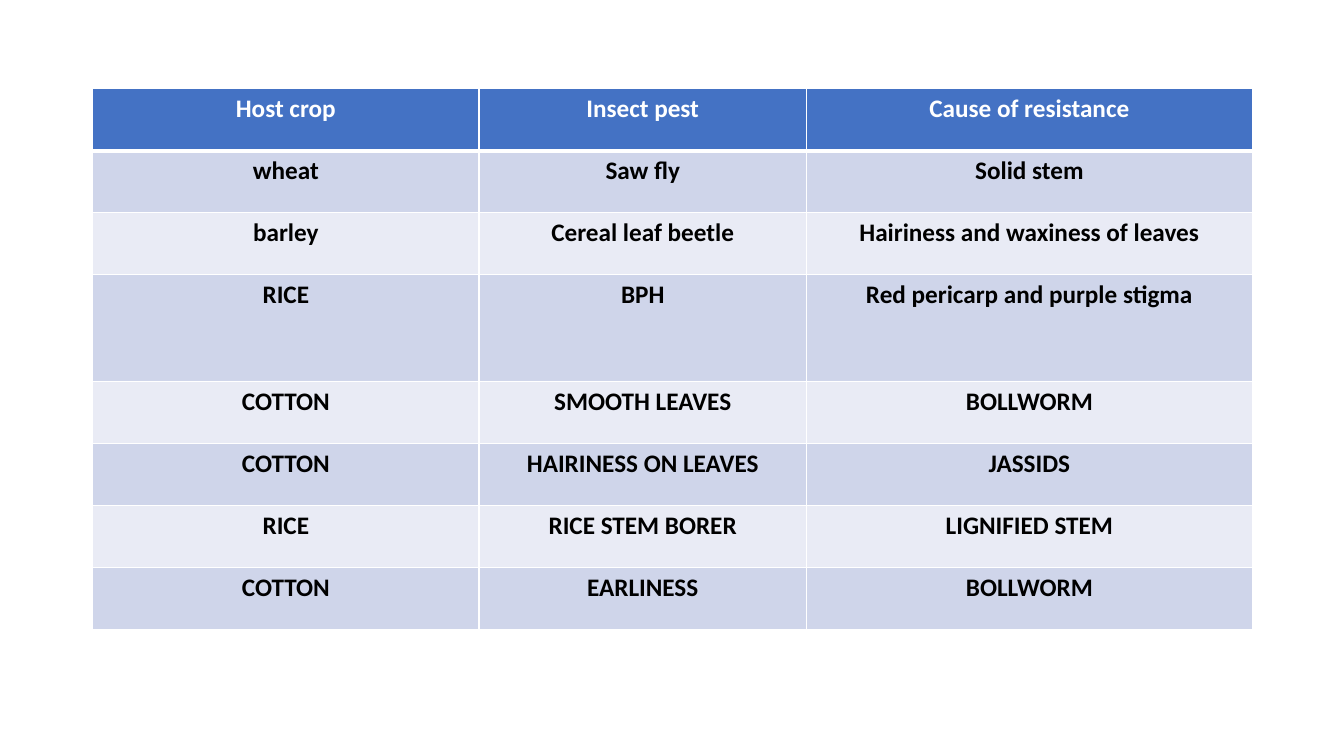
from dataclasses import dataclass

from lxml.etree import SubElement
from pptx import Presentation
from pptx.dml.color import RGBColor
from pptx.enum.text import PP_ALIGN
from pptx.oxml.ns import qn
from pptx.slide import Slide
from pptx.table import _Cell
from pptx.util import Inches, Pt


@dataclass(frozen=True)
class Theme:
    font: str = "Calibri"
    text_size: int = 18
    header_fill: str = "4472C4"
    header_text: str = "FFFFFF"
    body_text: str = "000000"
    band_fills: tuple[str, str] = ("CFD5EA", "E9EBF5")
    border: str = "FFFFFF"
    thin_border: int = 1
    header_border: int = 3


@dataclass(frozen=True)
class Grid:
    left: float
    top: float
    columns: tuple[float, ...]
    row_height: float


@dataclass(frozen=True)
class ResistanceRow:
    crop: str
    pest: str
    cause: str
    height_share: float = 1


THEME = Theme()
GRID = Grid(left=0.92, top=0.88, columns=(3.83, 3.25, 4.42), row_height=0.615)
ROWS = (
    ResistanceRow("Host crop", "Insect pest", "Cause of resistance"),
    ResistanceRow("wheat", "Saw fly", "Solid stem"),
    ResistanceRow("barley", "Cereal leaf beetle", "Hairiness and waxiness of leaves"),
    ResistanceRow("RICE", "BPH", "Red pericarp and purple stigma", height_share=1.73),
    ResistanceRow("COTTON", "SMOOTH LEAVES", "BOLLWORM"),
    ResistanceRow("COTTON", "HAIRINESS ON LEAVES", "JASSIDS"),
    ResistanceRow("RICE", "RICE STEM BORER", "LIGNIFIED STEM"),
    ResistanceRow("COTTON", "EARLINESS", "BOLLWORM"),
)


def set_borders(cell: _Cell, top: int, bottom: int) -> None:
    properties = cell._tc.get_or_add_tcPr()
    widths = {"lnL": THEME.thin_border, "lnR": THEME.thin_border, "lnT": top, "lnB": bottom}
    for side, width in widths.items():
        line = SubElement(properties, qn(f"a:{side}"), w=str(Pt(width)))
        fill = SubElement(line, qn("a:solidFill"))
        SubElement(fill, qn("a:srgbClr"), val=THEME.border)


def style_cell(cell: _Cell, text: str, row_index: int) -> None:
    is_header = row_index == 0
    set_borders(
        cell,
        top=THEME.header_border if row_index == 1 else THEME.thin_border,
        bottom=THEME.header_border if is_header else THEME.thin_border,
    )
    fill = THEME.header_fill if is_header else THEME.band_fills[(row_index - 1) % 2]
    cell.fill.solid()
    cell.fill.fore_color.rgb = RGBColor.from_string(fill)
    cell.text = text
    paragraph = cell.text_frame.paragraphs[0]
    paragraph.alignment = PP_ALIGN.CENTER
    font = paragraph.font
    font.name = THEME.font
    font.size = Pt(THEME.text_size)
    font.bold = True
    font.color.rgb = RGBColor.from_string(THEME.header_text if is_header else THEME.body_text)


def add_resistance_table(page: Slide) -> None:
    total_height = GRID.row_height * sum(row.height_share for row in ROWS)
    frame = page.shapes.add_table(
        len(ROWS),
        len(GRID.columns),
        Inches(GRID.left),
        Inches(GRID.top),
        Inches(sum(GRID.columns)),
        Inches(total_height),
    )
    table = frame.table
    table.horz_banding = False
    for column, width in zip(table.columns, GRID.columns):
        column.width = Inches(width)
    for row_index, row in enumerate(ROWS):
        table.rows[row_index].height = Inches(GRID.row_height * row.height_share)
        for column_index, text in enumerate((row.crop, row.pest, row.cause)):
            style_cell(table.cell(row_index, column_index), text, row_index)


def main() -> None:
    deck = Presentation()
    deck.slide_width = Inches(13.33)
    deck.slide_height = Inches(7.5)
    page = deck.slides.add_slide(deck.slide_layouts[6])
    add_resistance_table(page)
    deck.save("out.pptx")


if __name__ == "__main__":
    main()
